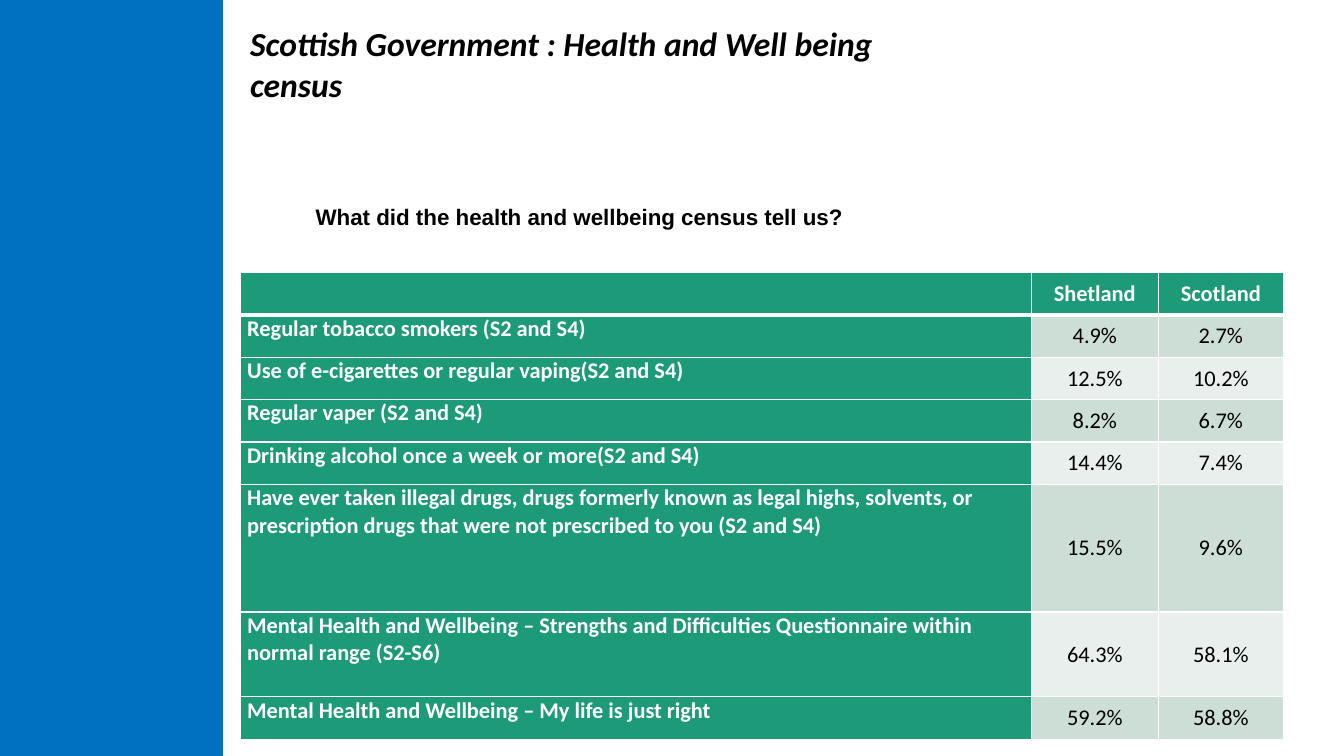
"""Build the health and well being census slide."""
from dataclasses import dataclass

from lxml import etree
from pptx import Presentation
from pptx.dml.color import RGBColor
from pptx.enum.shapes import MSO_SHAPE
from pptx.enum.text import MSO_ANCHOR, MSO_AUTO_SIZE, PP_ALIGN
from pptx.oxml.ns import qn
from pptx.util import Cm, Pt

RECT = MSO_SHAPE.RECTANGLE
TOP, MIDDLE = MSO_ANCHOR.TOP, MSO_ANCHOR.MIDDLE
LEFT, CENTER = PP_ALIGN.LEFT, PP_ALIGN.CENTER
NO_FIT = MSO_AUTO_SIZE.NONE

TITLE = "Scottish Government : Health and Well being census"
QUERY = "What did the health and wellbeing census tell us?"
HEAD = ("", "Shetland", "Scotland")
ROWS = [
    ("Regular tobacco smokers (S2 and S4)", "4.9%", "2.7%"),
    ("Use of e-cigarettes or regular vaping(S2 and S4)", "12.5%", "10.2%"),
    ("Regular vaper (S2 and S4)", "8.2%", "6.7%"),
    ("Drinking alcohol once a week or more(S2 and S4)", "14.4%", "7.4%"),
    ("Have ever taken illegal drugs, drugs formerly known as legal highs, "
     "solvents, or prescription drugs that were not prescribed to you "
     "(S2 and S4)", "15.5%", "9.6%"),
    ("Mental Health and Wellbeing – Strengths and Difficulties "
     "Questionnaire within normal range (S2-S6)", "64.3%", "58.1%"),
    ("Mental Health and Wellbeing – My life is just right", "59.2%", "58.8%"),
]
UNITS = (1, 1, 1, 1, 1, 3, 2, 1)
WIDTHS = (19.94, 3.2, 3.15)
UNIT = 1.07


@dataclass(frozen=True)
class Theme:
    """Hold the colours, fonts and type sizes."""
    blue: str = "0070C0"
    green: str = "1D9A78"
    bands: tuple = ("CDDED6", "E8EFEC")
    white: str = "FFFFFF"
    black: str = "000000"
    sans: str = "Calibri"
    plain: str = "Arial"
    large: int = 24
    base: int = 16


THEME = Theme()


def paint(fill, tone):
    """Fill with one solid colour."""
    fill.solid()
    fill.fore_color.rgb = RGBColor.from_string(tone)


def write(frame, text, align, face, size, tone, bold, slant=False):
    """Write one run into the first paragraph."""
    para = frame.paragraphs[0]
    para.alignment = align
    para.space_before = Pt(0)
    run = para.add_run()
    run.text = text
    font = run.font
    font.name, font.size = face, Pt(size)
    font.bold, font.italic = bold, slant
    font.color.rgb = RGBColor.from_string(tone)
    return para


def place(shape, left, top, width, height):
    """Set the box of a placeholder and its text rules."""
    shape.left, shape.top = Cm(left), Cm(top)
    shape.width, shape.height = Cm(width), Cm(height)
    frame = shape.text_frame
    frame.word_wrap = True
    frame.auto_size = NO_FIT
    frame.vertical_anchor = TOP
    return frame


def edge(cell, base):
    """Draw white borders, with the given width below."""
    props = cell._tc.get_or_add_tcPr()
    for side, width in (("L", 1), ("R", 1), ("T", 1), ("B", base)):
        line = etree.SubElement(props, qn("a:ln" + side), w=str(Pt(width)))
        fill = etree.SubElement(line, qn("a:solidFill"))
        etree.SubElement(fill, qn("a:srgbClr"), val=THEME.white)


def add_grid(slide):
    """Add the census table."""
    data = [HEAD, *ROWS]
    grid = slide.shapes.add_table(
        len(data), len(HEAD), Cm(6.05), Cm(6.86),
        Cm(sum(WIDTHS)), Cm(UNIT * sum(UNITS))).table
    for col, width in zip(grid.columns, WIDTHS):
        col.width = Cm(width)
    for r, (row, count) in enumerate(zip(data, UNITS)):
        grid.rows[r].height = Cm(UNIT * count)
        for c, text in enumerate(row):
            cell = grid.cell(r, c)
            label = r == 0 or c == 0
            edge(cell, 3 if r == 0 else 1)
            paint(cell.fill, THEME.green if label else THEME.bands[(r - 1) % 2])
            cell.margin_left = cell.margin_right = Cm(0.18)
            cell.margin_top = cell.margin_bottom = Cm(0)
            cell.vertical_anchor = MIDDLE if c else TOP
            if text:
                write(cell.text_frame, text, CENTER if c else LEFT, THEME.sans,
                      THEME.base, THEME.white if label else THEME.black, label)


def main():
    """Build and save the slide."""
    deck = Presentation()
    deck.slide_width, deck.slide_height = Cm(33.87), Cm(19.05)
    slide = deck.slides.add_slide(deck.slide_layouts[1])

    panel = slide.shapes.add_shape(RECT, 0, 0, Cm(5.61), deck.slide_height)
    panel.shadow.inherit = False
    paint(panel.fill, THEME.blue)
    paint(panel.line.fill, THEME.blue)
    panel.line.width = Pt(1)

    frame = place(slide.shapes.title, 6.05, 0.46, 18.34, 2.31)
    write(frame, TITLE, LEFT, THEME.sans, THEME.large, THEME.black, True, True)

    frame = place(slide.placeholders[1], 7.7, 5, 21.06, 1.45)
    para = write(frame, QUERY, LEFT, THEME.plain, THEME.base, THEME.black, True)
    props = para._p.get_or_add_pPr()
    props.set("marL", "0")
    props.set("indent", "0")
    etree.SubElement(props, qn("a:buNone"))

    add_grid(slide)
    deck.save("out.pptx")


if __name__ == "__main__":
    main()
